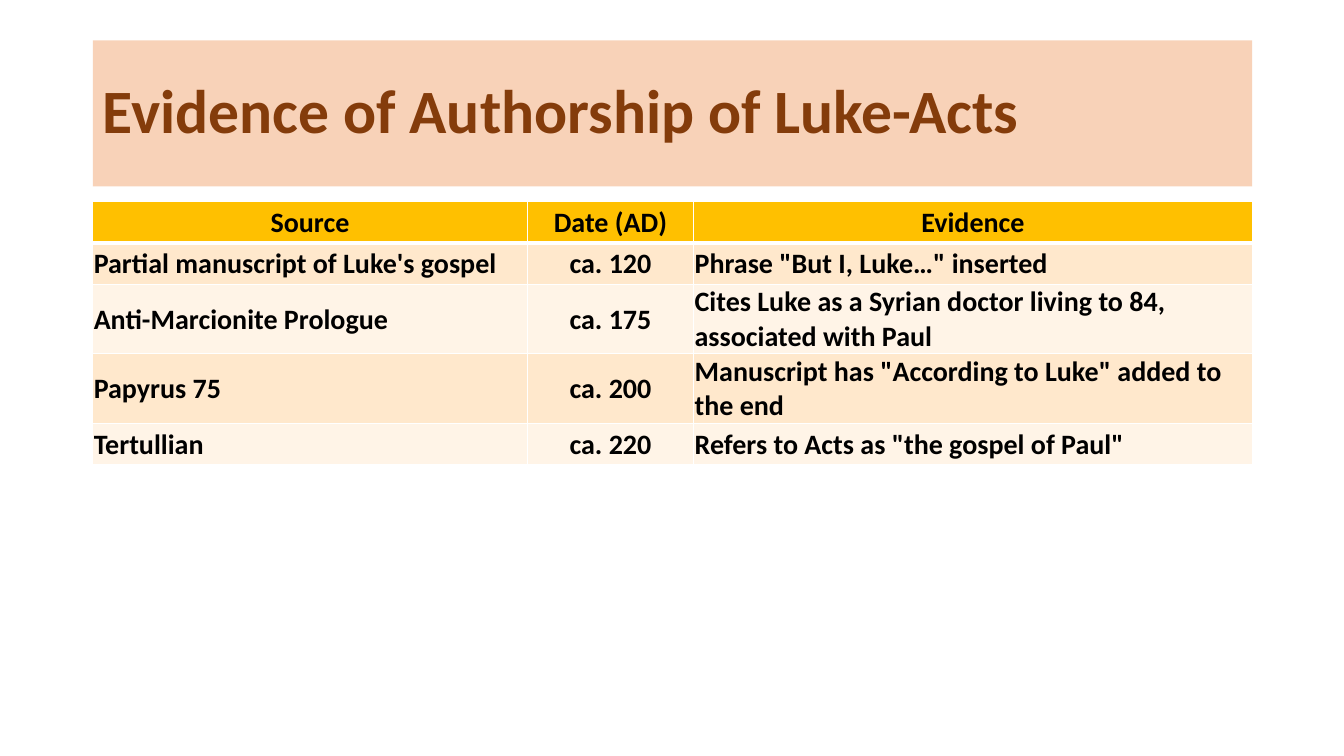
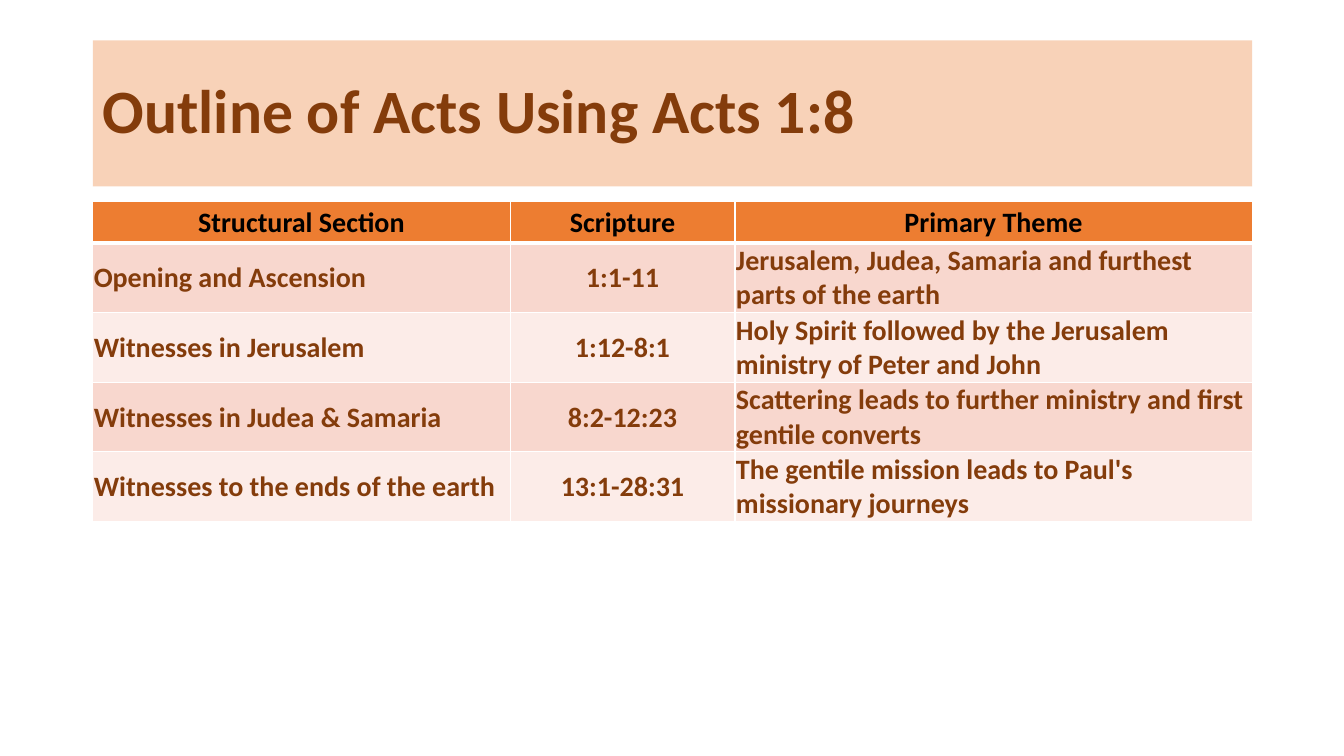
from dataclasses import dataclass

from lxml import etree
from pptx import Presentation
from pptx.dml.color import RGBColor
from pptx.enum.text import MSO_ANCHOR, MSO_AUTO_SIZE, PP_ALIGN
from pptx.oxml.ns import qn
from pptx.util import Inches, Pt

LEFT, CENTER = PP_ALIGN.LEFT, PP_ALIGN.CENTER
MIDDLE = MSO_ANCHOR.MIDDLE
NO_AUTOFIT = MSO_AUTO_SIZE.NONE
TITLE_ONLY = 5


# Shared style
@dataclass(frozen=True)
class Theme:
    font: str = "Calibri"
    brown: str = "843C0B"
    black: str = "000000"
    white: str = "FFFFFF"
    title_band: str = "F4B183"
    title_opacity: int = 57
    title_size: int = 44
    table_size: int = 20
    thin_border: int = 1
    header_border: int = 3


# Header, odd row and even row fills
GOLD = ("FFC000", "FFE8CC", "FFF4E7")
ORANGE = ("ED7D31", "F8D7CE", "FCECE8")


class Deck:
    MARGIN, WIDTH = 0.92, 11.5
    ROW_HEIGHT = 0.41

    def __init__(self, theme):
        self.theme = theme
        self.presentation = Presentation()
        self.presentation.slide_width = Inches(13.33)
        self.presentation.slide_height = Inches(7.5)
        self.slide = None

    def add_slide(self, title):
        layout = self.presentation.slide_layouts[TITLE_ONLY]
        self.slide = self.presentation.slides.add_slide(layout)
        self.add_title(title)

    def format_text(self, paragraph, size, color, alignment):
        paragraph.alignment = alignment
        values = {"name": self.theme.font, "size": Pt(size), "bold": True}
        for name, value in values.items():
            setattr(paragraph.font, name, value)
        paragraph.font.color.rgb = RGBColor.from_string(color)

    def add_title(self, text):
        shape = self.slide.shapes.title
        bounds = {"left": self.MARGIN, "top": 0.4, "width": self.WIDTH, "height": 1.45}
        for name, value in bounds.items():
            setattr(shape, name, Inches(value))
        # Translucent band
        shape.fill.solid()
        shape.fill.fore_color.rgb = RGBColor.from_string(self.theme.title_band)
        color = shape.fill._xPr.find(".//" + qn("a:srgbClr"))
        etree.SubElement(color, qn("a:alpha"), val=str(self.theme.title_opacity * 1000))
        # Title text
        frame = shape.text_frame
        frame.text = text
        frame.auto_size = NO_AUTOFIT
        frame.vertical_anchor = MIDDLE
        paragraph = frame.paragraphs[0]
        paragraph.line_spacing = 0.9
        self.format_text(paragraph, self.theme.title_size, self.theme.brown, LEFT)

    def add_borders(self, cell, top, bottom):
        thin = self.theme.thin_border
        properties = cell._tc.get_or_add_tcPr()
        for side, width in {"L": thin, "R": thin, "T": top, "B": bottom}.items():
            line = etree.SubElement(properties, qn("a:ln" + side), w=str(Pt(width)))
            fill = etree.SubElement(line, qn("a:solidFill"))
            etree.SubElement(fill, qn("a:srgbClr"), val=self.theme.white)

    def add_cell(self, cell, text, fill, color, alignment, top, bottom):
        cell.text = text
        margins = {"margin_left": 0.01, "margin_top": 0.01, "margin_right": 0.01, "margin_bottom": 0}
        for name, value in margins.items():
            setattr(cell, name, Inches(value))
        cell.vertical_anchor = MIDDLE
        self.add_borders(cell, top, bottom)
        cell.fill.solid()
        cell.fill.fore_color.rgb = RGBColor.from_string(fill)
        self.format_text(cell.text_frame.paragraphs[0], self.theme.table_size, color, alignment)

    def add_table(self, rows, column_widths, fills, body_color):
        theme = self.theme
        header_fill, *body_fills = fills
        table = self.slide.shapes.add_table(
            len(rows), len(column_widths), Inches(self.MARGIN), Inches(2),
            Inches(self.WIDTH), Inches(self.ROW_HEIGHT * len(rows))).table
        for column, width in zip(table.columns, column_widths):
            column.width = Inches(width)
        for row_index, texts in enumerate(rows):
            table.rows[row_index].height = Inches(self.ROW_HEIGHT)
            is_header = row_index == 0
            fill = header_fill if is_header else body_fills[(row_index - 1) % 2]
            color = theme.black if is_header else body_color
            # The thick rule lies between the header and the first body row
            top = theme.header_border if row_index == 1 else theme.thin_border
            bottom = theme.header_border if is_header else theme.thin_border
            for column_index, text in enumerate(texts):
                alignment = CENTER if is_header or column_index == 1 else LEFT
                self.add_cell(table.cell(row_index, column_index), text,
                              fill, color, alignment, top, bottom)


def main():
    theme = Theme()
    deck = Deck(theme)

    # Authorship evidence
    deck.add_slide("Evidence of Authorship of Luke-Acts")
    deck.add_table([
        ("Source", "Date (AD)", "Evidence"),
        ("Partial manuscript of Luke's gospel", "ca. 120", 'Phrase "But I, Luke…" inserted'),
        ("Anti-Marcionite Prologue", "ca. 175",
         "Cites Luke as a Syrian doctor living to 84, associated with Paul"),
        ("Papyrus 75", "ca. 200", 'Manuscript has "According to Luke" added to the end'),
        ("Tertullian", "ca. 220", 'Refers to Acts as "the gospel of Paul"'),
    ], (4.31, 1.65, 5.54), GOLD, theme.black)

    # Outline of Acts
    deck.add_slide("Outline of Acts Using Acts 1:8")
    deck.add_table([
        ("Structural Section", "Scripture", "Primary Theme"),
        ("Opening and Ascension", "1:1-11",
         "Jerusalem, Judea, Samaria and furthest parts of the earth"),
        ("Witnesses in Jerusalem", "1:12-8:1",
         "Holy Spirit followed by the Jerusalem ministry of Peter and John"),
        ("Witnesses in Judea & Samaria", "8:2-12:23",
         "Scattering leads to further ministry and first gentile converts"),
        ("Witnesses to the ends of the earth", "13:1-28:31",
         "The gentile mission leads to Paul's missionary journeys"),
    ], (4.14, 2.23, 5.13), ORANGE, theme.brown)

    deck.presentation.save("out.pptx")


if __name__ == "__main__":
    main()
